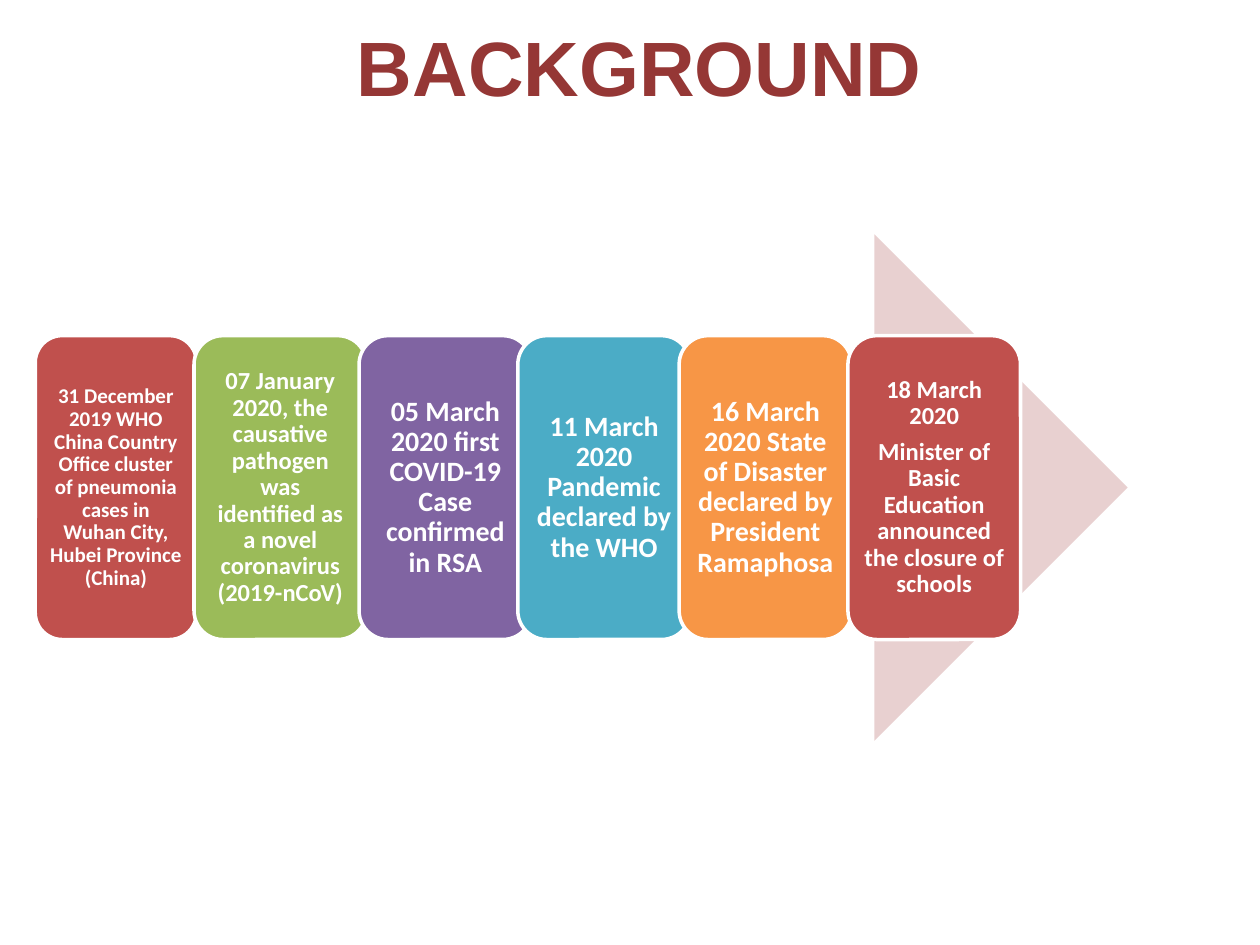
"""Build a timeline slide of COVID-19 background events."""
import pptx
import pptx.dml.color
import pptx.enum.shapes
import pptx.enum.text
import pptx.util

Inches, Pt = pptx.util.Inches, pptx.util.Pt
RGBColor = pptx.dml.color.RGBColor
MSO_SHAPE = pptx.enum.shapes.MSO_SHAPE
CENTER = pptx.enum.text.PP_ALIGN.CENTER
MIDDLE = pptx.enum.text.MSO_ANCHOR.MIDDLE

MAROON = RGBColor(0x95, 0x37, 0x35)
PINK = RGBColor(0xE8, 0xD0, 0xD0)
WHITE = RGBColor(0xFF, 0xFF, 0xFF)
RED = RGBColor(0xC0, 0x50, 0x4D)
GREEN = RGBColor(0x9B, 0xBB, 0x59)
PURPLE = RGBColor(0x80, 0x64, 0xA2)
TEAL = RGBColor(0x4B, 0xAC, 0xC6)
ORANGE = RGBColor(0xF7, 0x96, 0x46)

TITLE = "BACKGROUND"
EVENTS = [
    (0.28, 1.28, RED, 12, ["31 December 2019 WHO China Country Office cluster of "
                           "pneumonia cases in Wuhan City, Hubei Province (China)"]),
    (1.54, 1.37, GREEN, 14, ["07 January 2020, the causative pathogen was identified "
                             "as a novel coronavirus (2019-nCoV)"]),
    (2.85, 1.37, PURPLE, 16, ["05 March 2020 first COVID-19 Case confirmed in RSA"]),
    (4.11, 1.37, TEAL, 16, ["11 March 2020 Pandemic declared by the WHO"]),
    (5.39, 1.37, ORANGE, 16, ["16 March 2020 State of Disaster declared by "
                              "President Ramaphosa"]),
    (6.73, 1.37, RED, 14, ["18 March 2020",
                           "Minister of Basic Education announced the closure of schools"]),
]
ARROW = (0.98, 1.86, 7.97, 4.02)
CARD_HEIGHT = 0.6 * ARROW[3]
CARD_TOP = ARROW[1] + (ARROW[3] - CARD_HEIGHT) / 2
LINE_SPACING, PARAGRAPH_GAP = 0.9, 0.35
INSET_PER_POINT = 0.0042


def write(tf, paragraphs, font, size, color, inset):
    tf.word_wrap = True
    tf.vertical_anchor = MIDDLE
    tf.margin_left = tf.margin_right = tf.margin_top = tf.margin_bottom = Inches(inset)
    for i, text in enumerate(paragraphs):
        p = tf.add_paragraph() if i else tf.paragraphs[0]
        p.alignment = CENTER
        p.line_spacing = LINE_SPACING
        if i:
            p.space_before = Pt(PARAGRAPH_GAP * size)
        r = p.add_run()
        r.text = text
        r.font.name, r.font.size, r.font.bold = font, Pt(size), True
        r.font.color.rgb = color


def add_shape(slide, kind, box, fill):
    sp = slide.shapes.add_shape(kind, *map(Inches, box))
    sp.shadow.inherit = False
    sp.fill.solid()
    sp.fill.fore_color.rgb = fill
    sp.line.fill.background()
    return sp


def main():
    prs = pptx.Presentation()
    prs.slide_width, prs.slide_height = Inches(10), Inches(7.5)
    s = prs.slides.add_slide(prs.slide_layouts[6])

    title = s.shapes.add_textbox(*map(Inches, (0.43, 0.13, 9.29, 0.79)))
    write(title.text_frame, [TITLE], "Arial", 44, MAROON, 0.05)
    title.text_frame.paragraphs[0].line_spacing = 1.0

    add_shape(s, MSO_SHAPE.RIGHT_ARROW, ARROW, PINK)
    for left, width, fill, size, paragraphs in EVENTS:
        card = add_shape(s, MSO_SHAPE.ROUNDED_RECTANGLE,
                         (left, CARD_TOP, width, CARD_HEIGHT), fill)
        card.line.color.rgb = WHITE
        card.line.width = Pt(2)
        write(card.text_frame, paragraphs, "Calibri", size, WHITE, size * INSET_PER_POINT)

    prs.save("out.pptx")


if __name__ == "__main__":
    main()
